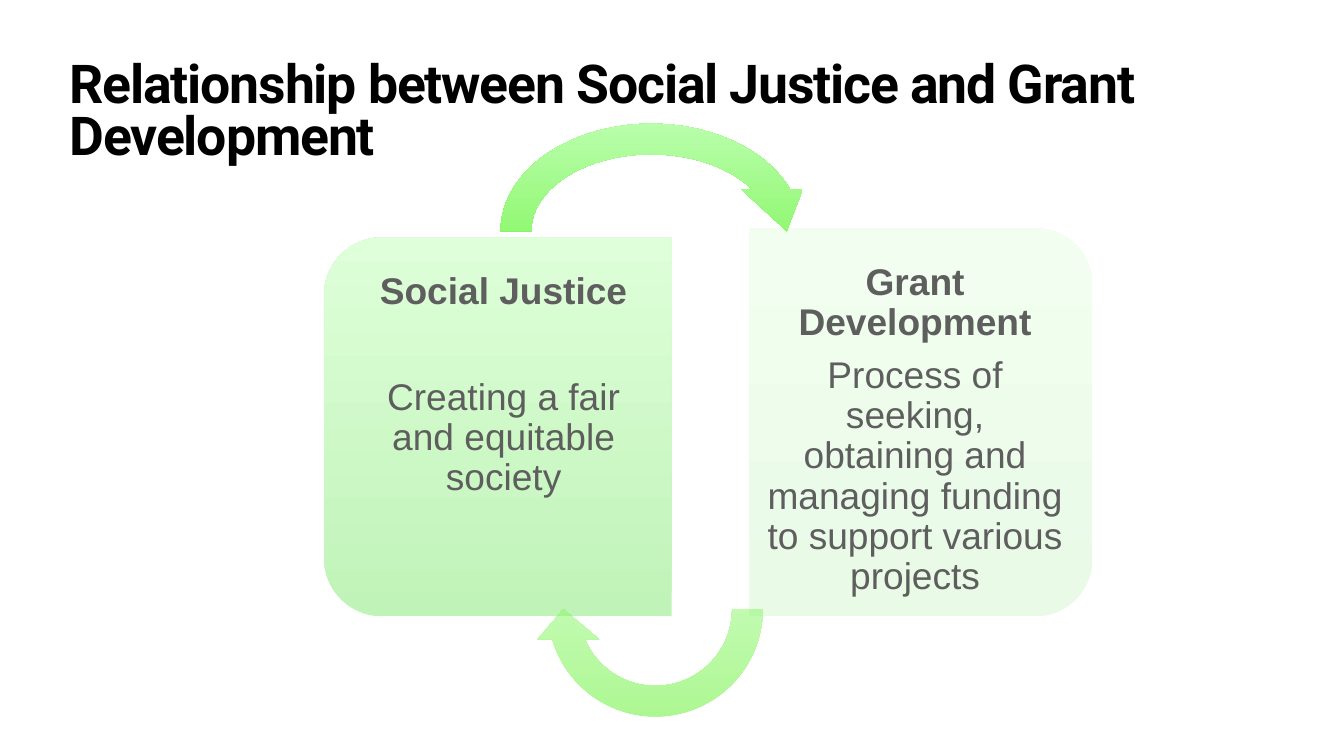
from lxml import etree
from pptx import Presentation
from pptx.dml.color import RGBColor
from pptx.enum import shapes, text
from pptx.oxml import ns
from pptx.util import Inches, Pt

GREY = "5E5E5E"
ARROW_STOPS = ("56F01E", "B8FFAC")


def colour(value):
    return RGBColor.from_string(value)


def fill_upwards(shape, stops, opacity=100):
    """Blend from the first colour at the bottom to the second at the top, whatever the rotation."""
    shape.shadow.inherit = False
    shape.line.fill.background()
    shape.fill.gradient()
    shape.fill.gradient_angle = 90
    for stop, value in zip(shape.fill.gradient_stops, stops):
        stop.color.rgb = colour(value)
    gradient = shape._element.spPr.find(ns.qn("a:gradFill"))
    gradient.set("rotWithShape", "0")
    for position, stop in zip((0, 100000), gradient.iter(ns.qn("a:gs"))):
        stop.set("pos", str(position))
        if opacity < 100:
            alpha = etree.SubElement(stop[0], ns.qn("a:alpha"))
            alpha.set("val", str(opacity * 1000))


def add_title(page, box, wording):
    title = page.shapes.title
    title.left, title.top, title.width, title.height = map(Inches, box)
    frame = title.text_frame
    frame.auto_size = text.MSO_AUTO_SIZE.NONE
    frame.vertical_anchor = text.MSO_ANCHOR.TOP
    frame.word_wrap = True
    frame.margin_left = frame.margin_right = Inches(0.06)
    frame.margin_top = frame.margin_bottom = Inches(0.06)
    frame.text = wording
    para = frame.paragraphs[0]
    para.alignment = text.PP_ALIGN.LEFT
    para.line_spacing = 0.8
    para.font.name = "Roboto"
    para.font.size = Pt(76.5)
    para.font.bold = True
    para.font.color.rgb = colour("000000")
    para.runs[0].font._element.set("spc", "-170")


def add_card(page, box, rotation, stops):
    """Draw a card in the box as seen, its rounded end turned to the side by the rotation."""
    left, top, width, height = box
    shift = (height - width) / 2
    card = page.shapes.add_shape(
        shapes.MSO_SHAPE.ROUND_2_SAME_RECTANGLE,
        Inches(left - shift), Inches(top + shift), Inches(height), Inches(width))
    card.rotation = rotation
    fill_upwards(card, stops)


def add_card_text(page, box, margins, heading, body, gap):
    frame = page.shapes.add_textbox(*map(Inches, box)).text_frame
    frame.word_wrap = True
    frame.margin_left, frame.margin_right = map(Inches, margins)
    frame.margin_top = frame.margin_bottom = Inches(0.37)
    frame.text = f"{heading}\n{body}"
    for para, bold in zip(frame.paragraphs, (True, False)):
        para.alignment = text.PP_ALIGN.CENTER
        para.line_spacing = 0.9
        para.font.name = "Arial"
        para.font.size = Pt(53)
        para.font.bold = bold
        para.font.color.rgb = colour(GREY)
    frame.paragraphs[0].space_after = Pt(gap)


def add_cycle_arrow(page, box, rotation, opacity):
    arrow = page.shapes.add_shape(shapes.MSO_SHAPE.CIRCULAR_ARROW, *map(Inches, box))
    arrow.rotation = rotation
    fill_upwards(arrow, ARROW_STOPS, opacity)


def main():
    deck = Presentation()
    deck.slide_width, deck.slide_height = Inches(26.67), Inches(15)
    page = deck.slides.add_slide(deck.slide_layouts[5])

    add_title(page, (1.32, 1.18, 24.03, 1.57),
              "Relationship between Social Justice and Grant Development")

    add_card(page, (6.43, 4.71, 6.9, 7.52), 270, ("C0F3B8", "DEFFD9"))
    add_card_text(page, (6.77, 5.03, 6.56, 6.85), (0.22, 0.33), "Social Justice",
                  "Creating a fair and equitable society", 94.3)

    add_card(page, (14.87, 4.53, 6.81, 7.7), 90, ("E9FAE6", "F2FFF0"))
    add_card_text(page, (14.87, 4.86, 6.47, 7.03), (0.33, 0.22), "Grant Development",
                  "Process of seeking, obtaining and managing funding "
                  "to support various projects", 18.6)

    add_cycle_arrow(page, (9.63, 2.15, 6.59, 4.87), 0, 90)
    add_cycle_arrow(page, (10.57, 9.65, 4.87, 4.87), 180, 50)
    deck.save("out.pptx")


if __name__ == "__main__":
    main()
